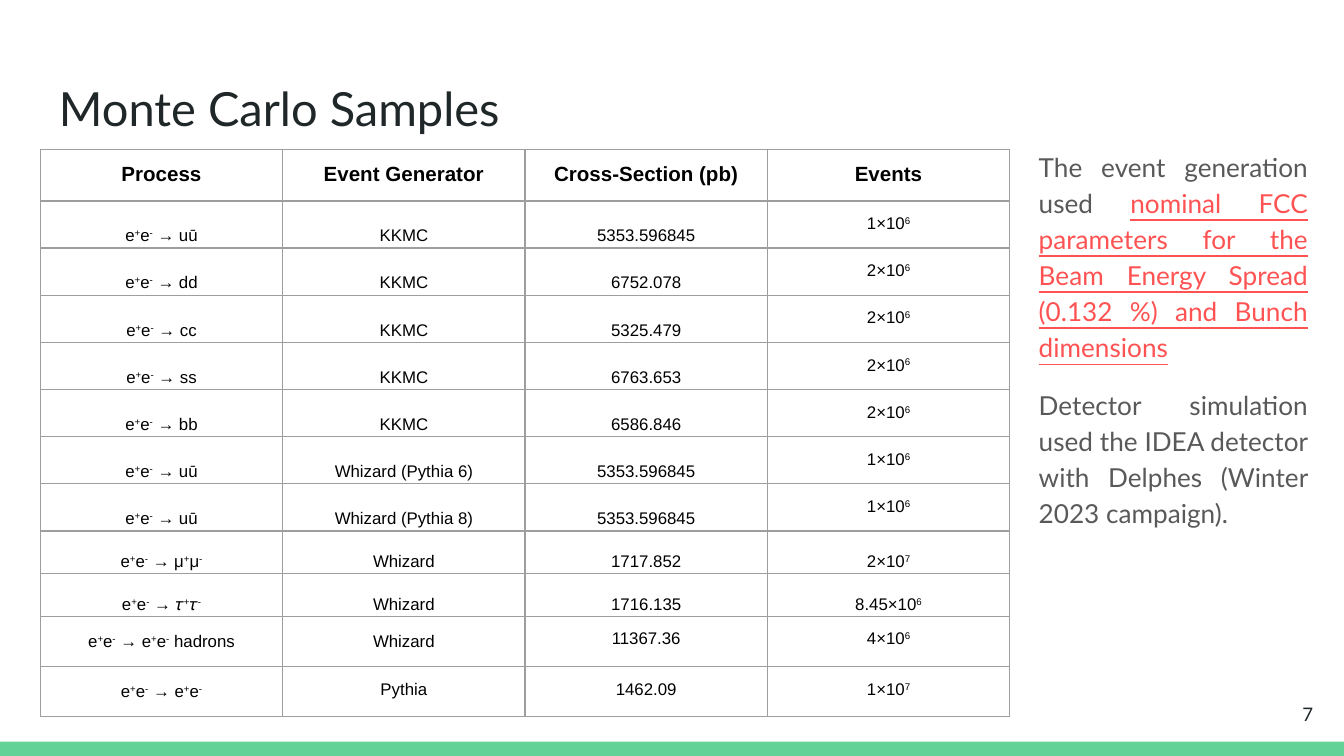
from dataclasses import dataclass

from lxml.etree import SubElement
from pptx import Presentation
from pptx.dml.color import RGBColor
from pptx.enum.shapes import MSO_SHAPE
from pptx.enum.text import MSO_ANCHOR, PP_ALIGN
from pptx.oxml.ns import qn
from pptx.slide import Slide
from pptx.table import _Cell
from pptx.text.text import TextFrame, _Paragraph, _Run
from pptx.util import Pt

GREEN = RGBColor(0x63, 0xD2, 0x97)
DARK = RGBColor(0x20, 0x27, 0x29)
GREY = RGBColor(0x59, 0x59, 0x59)
RED = RGBColor(0xFF, 0x52, 0x52)
BLACK = RGBColor(0x00, 0x00, 0x00)
BORDER = RGBColor(0x9E, 0x9E, 0x9E)


@dataclass(frozen=True)
class CellStyle:
    anchor: MSO_ANCHOR = MSO_ANCHOR.TOP
    side_margin: float = 7.2
    end_margin: float = 7.2
    line_spacing: float = 1.0
    size: float = 9
    bold: bool = False


HEADER = CellStyle(size=11, bold=True)
PLAIN = CellStyle()
SPACED = CellStyle(line_spacing=1.15)
LOW = CellStyle(MSO_ANCHOR.BOTTOM, 2.16, 1.44, 1.15)


@dataclass(frozen=True)
class Row:
    """One table row; text between a pair of ^ marks is superscript."""
    texts: tuple[str, str, str, str]
    styles: tuple[CellStyle, CellStyle, CellStyle, CellStyle]
    height: float = 22.9


def sample(products: str, generator: str, cross_section: str, events: str,
           *styles: CellStyle) -> Row:
    process = f"e^+^e^-^ → {products}"
    return Row((process, generator, cross_section, events),
               styles or (LOW, LOW, LOW, PLAIN))


ROWS = [
    Row(("Process", "Event Generator", "Cross-Section (pb)", "Events"),
        (HEADER,) * 4, 25.2),
    sample("uū", "KKMC", "5353.596845", "1×10^6^"),
    sample("dd", "KKMC", "6752.078", "2×10^6^"),
    sample("cc", "KKMC", "5325.479", "2×10^6^"),
    sample("ss", "KKMC", "6763.653", "2×10^6^"),
    sample("bb", "KKMC", "6586.846", "2×10^6^"),
    sample("uū", "Whizard (Pythia 6)", "5353.596845", "1×10^6^"),
    sample("uū", "Whizard (Pythia 8)", "5353.596845", "1×10^6^"),
    sample("μ^+^μ^-^", "Whizard", "1717.852", "2×10^7^", LOW, LOW, LOW, LOW),
    sample("𝜏^+^𝜏^-^", "Whizard", "1716.135", "8.45×10^6^", LOW, LOW, LOW, LOW),
    sample("e^+^e^-^ hadrons", "Whizard", "11367.36", "4×10^6^",
           SPACED, SPACED, PLAIN, PLAIN),
    sample("e^+^e^-^", "Pythia", "1462.09", "1×10^7^",
           SPACED, PLAIN, PLAIN, PLAIN),
]


def format_run(run: _Run, font_name: str, size: float, color: RGBColor) -> None:
    run.font.name = font_name
    run.font.size = Pt(size)
    run.font.color.rgb = color


def add_text_box(slide: Slide, left: float, top: float, width: float,
                 height: float, lines: list[str], size: float,
                 color: RGBColor) -> TextFrame:
    text_frame = slide.shapes.add_textbox(
        Pt(left), Pt(top), Pt(width), Pt(height)).text_frame
    text_frame.word_wrap = True
    text_frame.margin_left = text_frame.margin_right = Pt(7.2)
    text_frame.margin_top = text_frame.margin_bottom = Pt(7.2)
    text_frame.text = "\n".join(lines)
    for paragraph in text_frame.paragraphs:
        format_run(paragraph.runs[0], "Lato", size, color)
    return text_frame


def write_superscripts(paragraph: _Paragraph, text: str, style: CellStyle) -> None:
    for index, part in enumerate(text.split("^")):
        if not part:
            continue
        run = paragraph.add_run()
        run.text = part
        format_run(run, "Arial", style.size, BLACK)
        run.font.bold = style.bold
        if index % 2:
            run.font._element.set("baseline", "30000")


def add_borders(cell: _Cell) -> None:
    properties = cell._tc.get_or_add_tcPr()
    for side in ("a:lnL", "a:lnR", "a:lnT", "a:lnB"):
        line = SubElement(properties, qn(side), w=str(Pt(0.75)))
        fill = SubElement(line, qn("a:solidFill"))
        SubElement(fill, qn("a:srgbClr"), val=str(BORDER))


def fill_cell(cell: _Cell, text: str, style: CellStyle) -> None:
    add_borders(cell)
    cell.fill.background()
    cell.vertical_anchor = style.anchor
    cell.margin_left = cell.margin_right = Pt(style.side_margin)
    cell.margin_top = cell.margin_bottom = Pt(style.end_margin)
    paragraph = cell.text_frame.paragraphs[0]
    paragraph.alignment = PP_ALIGN.CENTER
    paragraph.line_spacing = style.line_spacing
    write_superscripts(paragraph, text, style)


def add_sample_table(slide: Slide) -> None:
    column_width = 129.85
    table = slide.shapes.add_table(
        len(ROWS), 4, Pt(21.6), Pt(80), Pt(4 * column_width),
        Pt(sum(row.height for row in ROWS))).table
    table.first_row = table.horz_banding = False
    for column in table.columns:
        column.width = Pt(column_width)
    for row_index, row in enumerate(ROWS):
        table.rows[row_index].height = Pt(row.height)
        for column_index, (text, style) in enumerate(zip(row.texts, row.styles)):
            fill_cell(table.cell(row_index, column_index), text, style)


def main() -> None:
    presentation = Presentation()
    presentation.slide_width = Pt(720)
    presentation.slide_height = Pt(405)
    slide = presentation.slides.add_slide(presentation.slide_layouts[6])

    # Footer bar
    bar = slide.shapes.add_shape(
        MSO_SHAPE.RECTANGLE, Pt(0), Pt(397.4), Pt(720), Pt(7.6))
    bar.shadow.inherit = False
    bar.fill.solid()
    bar.fill.fore_color.rgb = GREEN
    bar.line.fill.background()

    # Title and table
    add_text_box(slide, 24.5, 35.3, 671, 45.4, ["Monte Carlo Samples"], 25.2, DARK)
    add_sample_table(slide)

    # Side notes
    notes = add_text_box(slide, 549.4, 71.3, 158.4, 284.4, [
        "The event generation used ",
        "Detector simulation used the IDEA detector with Delphes "
        "(Winter 2023 campaign).",
    ], 14, GREY)
    for paragraph in notes.paragraphs:
        paragraph.alignment = PP_ALIGN.JUSTIFY
        paragraph.line_spacing = 1.15
    generation, detector = notes.paragraphs
    detector.space_before = Pt(12)
    highlight = generation.add_run()
    highlight.text = ("nominal FCC parameters for the Beam Energy Spread "
                      "(0.132 %) and Bunch dimensions")
    format_run(highlight, "Lato", 14, RED)
    highlight.font.underline = True

    # Slide number
    number = add_text_box(slide, 667.4, 367.2, 43.2, 31, ["7"], 10, DARK)
    number.vertical_anchor = MSO_ANCHOR.MIDDLE
    number.paragraphs[0].alignment = PP_ALIGN.RIGHT

    presentation.save("out.pptx")


if __name__ == "__main__":
    main()
